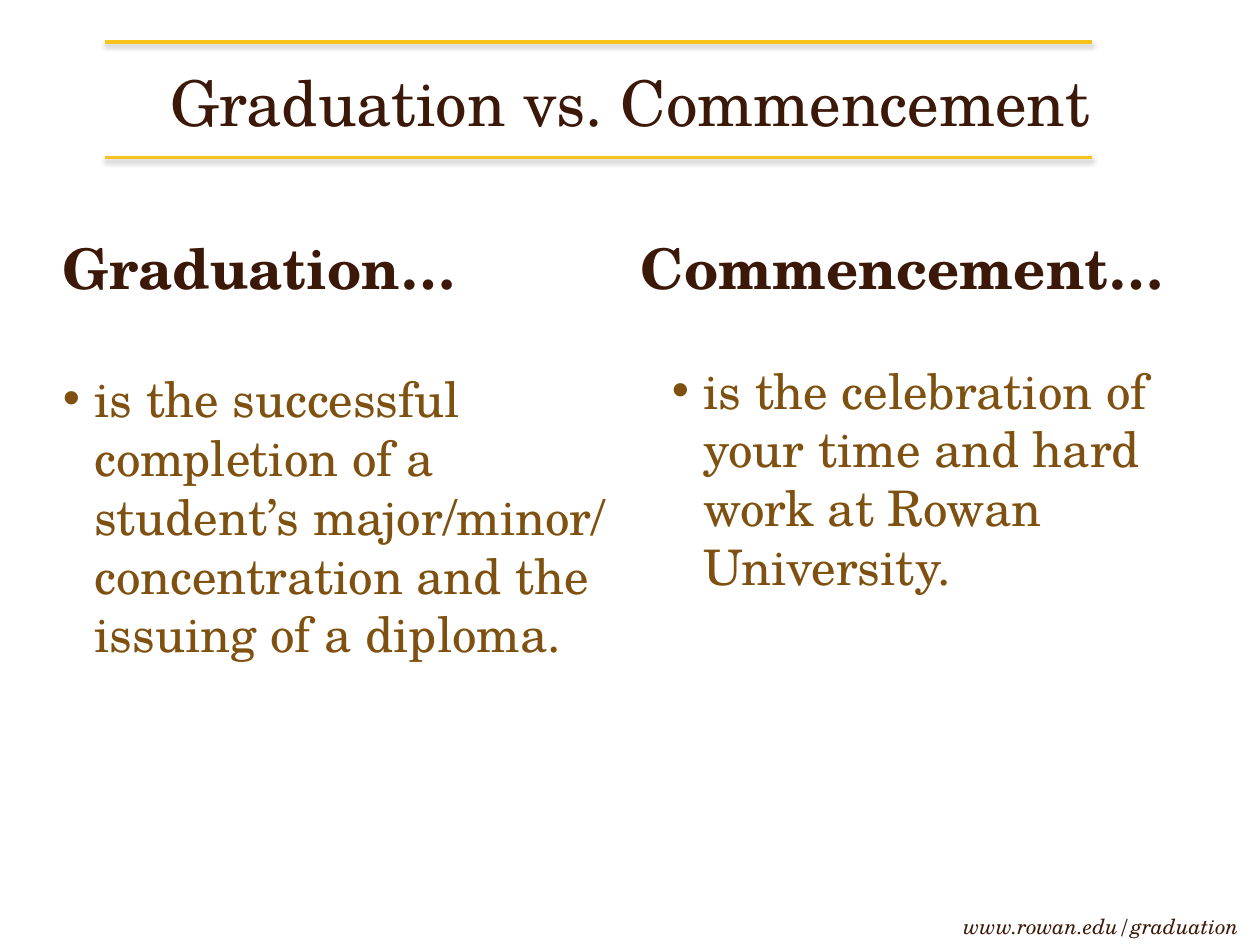
import pptx
import pptx.util
import pptx.dml.color
import pptx.enum.shapes
import pptx.enum.text
import pptx.oxml
import pptx.oxml.ns

CELL = pptx.util.Inches(1) // 12  # grid of 120 columns by 90 rows
BROWN, TAN, GOLD = "3B1808", "7F5111", "F7C21C"
ALIGN = pptx.enum.text.PP_ALIGN
ANCHOR = pptx.enum.text.MSO_ANCHOR
NS = pptx.oxml.ns.nsdecls("a")


def rgb(value):
    return pptx.dml.color.RGBColor.from_string(value)


def add_text(text, col, row, cols, rows, size, color=BROWN, bold=False, italic=False,
             align=ALIGN.LEFT, anchor=ANCHOR.TOP, indent=None):
    """Place text on the grid; an indent, in cells, makes it a bulleted paragraph."""
    box = [int(n * CELL) for n in (col, row, cols, rows)]
    tf = slide.shapes.add_textbox(*box).text_frame
    tf.word_wrap = True
    tf.vertical_anchor = anchor
    tf.margin_left = tf.margin_top = tf.margin_right = tf.margin_bottom = 0
    p = tf.paragraphs[0]
    p.alignment = align
    if indent:
        pPr = p._p.get_or_add_pPr()
        pPr.set("marL", str(indent * CELL))
        pPr.set("indent", str(-3 * CELL))
        pPr.append(pptx.oxml.parse_xml(f'<a:buFont {NS} typeface="Arial"/>'))
        pPr.append(pptx.oxml.parse_xml(f'<a:buChar {NS} char="•"/>'))
    r = p.add_run()
    r.text = text
    r.font.name = "TeX Gyre Schola"
    r.font.size = pptx.util.Pt(size)
    r.font.bold = bold
    r.font.italic = italic
    r.font.color.rgb = rgb(color)


prs = pptx.Presentation()
prs.slide_width, prs.slide_height = 120 * CELL, 90 * CELL
slide = prs.slides.add_slide(prs.slide_layouts[6])

add_text("Graduation vs. Commencement", 6, 6, 108, 9, 36, align=ALIGN.CENTER)

columns = [
    (6, "Graduation…", 35.1, 3,
     "is the successful completion of a student’s major/minor/ concentration "
     "and the issuing of a diploma."),
    (61, "Commencement…", 34.3, 6,
     "is the celebration of your time and hard work at Rowan University."),
]
for col, heading, row, indent, body in columns:
    add_text(heading, col, 20.2, 53, 8.4, 32, bold=True, anchor=ANCHOR.BOTTOM)
    add_text(body, col, row, 53, 80.4 - row, 28, color=TAN, indent=indent)

add_text("www.rowan.edu/graduation", 83, 87, 35, 3, 12, italic=True, align=ALIGN.RIGHT)

# Gold rules above and below the title, each with a soft shadow
for row in (15, 4):
    rule = slide.shapes.add_connector(pptx.enum.shapes.MSO_CONNECTOR.STRAIGHT,
                                      10 * CELL, row * CELL, 104 * CELL, row * CELL)
    rule.line.color.rgb = rgb(GOLD)
    rule.line.width = pptx.util.Pt(2)
    rule._element.spPr.append(pptx.oxml.parse_xml(
        f'<a:effectLst {NS}><a:outerShdw blurRad="40000" dist="20000" dir="5400000" '
        'rotWithShape="0"><a:srgbClr val="000000"><a:alpha val="38000"/></a:srgbClr>'
        '</a:outerShdw></a:effectLst>'))

prs.save("out.pptx")
